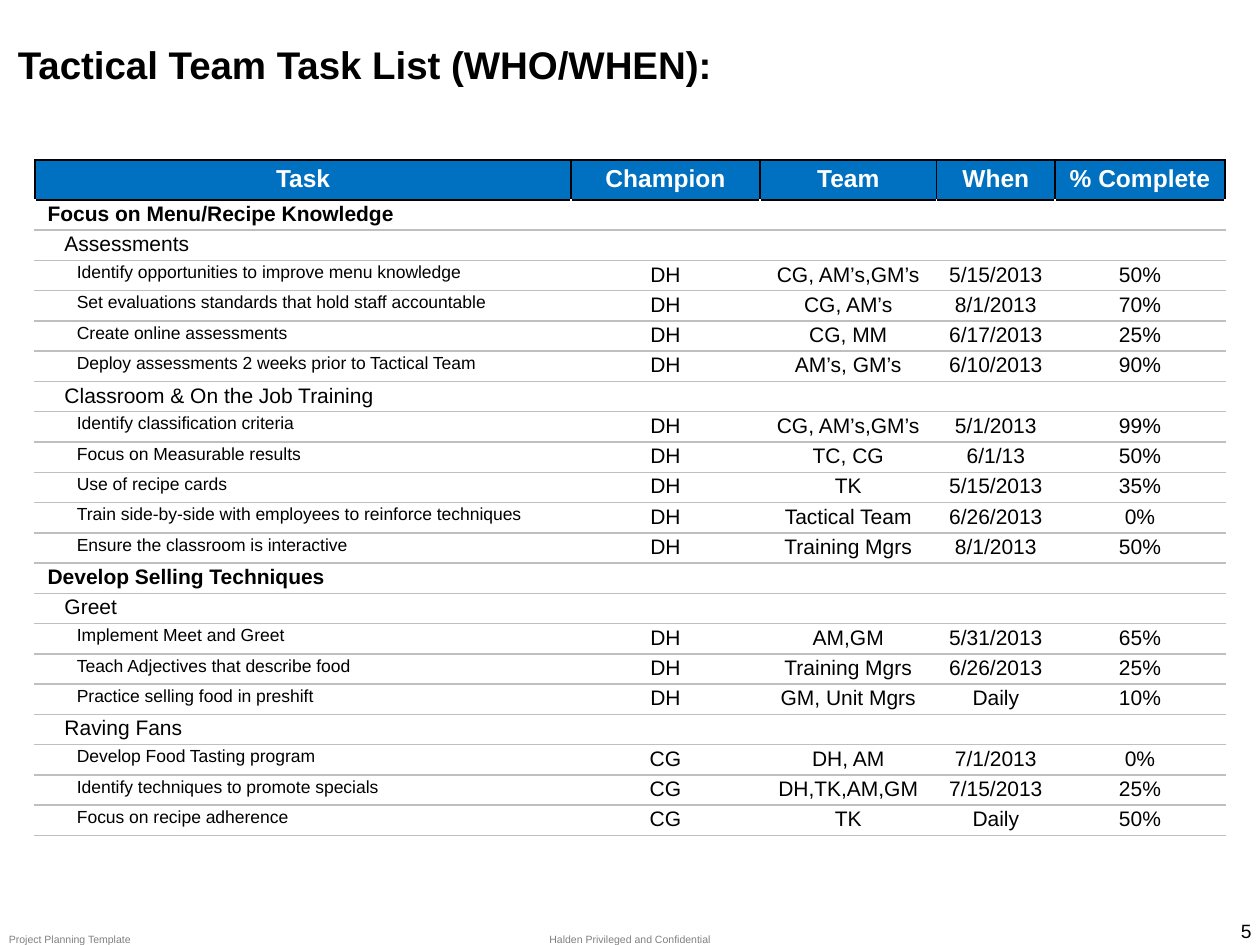
from dataclasses import dataclass

from lxml import etree
from pptx import Presentation
from pptx.dml.color import RGBColor
from pptx.enum.text import MSO_ANCHOR, PP_ALIGN
from pptx.oxml.ns import qn
from pptx.util import Cm, Pt

LEFT, CENTER, RIGHT = PP_ALIGN.LEFT, PP_ALIGN.CENTER, PP_ALIGN.RIGHT
TOP, MIDDLE = MSO_ANCHOR.TOP, MSO_ANCHOR.MIDDLE


@dataclass(frozen=True)
class Theme:
    font: str = "Arial"
    ink: str = "000000"
    muted: str = "808080"
    header_ink: str = "FFFFFF"
    header_fill: str = "0070C0"
    rule: str = "BFBFBF"
    title_size: int = 22
    header_size: int = 14
    body_size: int = 12
    task_size: int = 10
    number_size: int = 11
    footer_size: int = 6


HEADINGS = ["Task", "Champion", "Team", "When", "% Complete"]
COLUMN_WIDTHS = [10.8, 3.81, 3.56, 2.39, 3.42]
HEADER_HEIGHT, ROW_HEIGHT = 0.8, 0.61
LEVEL_INDENTS = [0, 0.34, 0.59]
SECTION, GROUP, TASK = range(3)

TASKS = [
    (SECTION, "Focus on Menu/Recipe Knowledge"),
    (GROUP, "Assessments"),
    (TASK, "Identify opportunities to improve menu knowledge", "DH", "CG, AM’s,GM’s", "5/15/2013", "50%"),
    (TASK, "Set evaluations standards that hold staff accountable", "DH", "CG, AM’s", "8/1/2013", "70%"),
    (TASK, "Create online assessments", "DH", "CG, MM", "6/17/2013", "25%"),
    (TASK, "Deploy assessments 2 weeks prior to Tactical Team", "DH", "AM’s, GM’s", "6/10/2013", "90%"),
    (GROUP, "Classroom & On the Job Training"),
    (TASK, "Identify classification criteria", "DH", "CG, AM’s,GM’s", "5/1/2013", "99%"),
    (TASK, "Focus on Measurable results", "DH", "TC, CG", "6/1/13", "50%"),
    (TASK, "Use of recipe cards", "DH", "TK", "5/15/2013", "35%"),
    (TASK, "Train side-by-side with employees to reinforce techniques", "DH", "Tactical Team", "6/26/2013", "0%"),
    (TASK, "Ensure the classroom is interactive", "DH", "Training Mgrs", "8/1/2013", "50%"),
    (SECTION, "Develop Selling Techniques"),
    (GROUP, "Greet"),
    (TASK, "Implement Meet and Greet", "DH", "AM,GM", "5/31/2013", "65%"),
    (TASK, "Teach Adjectives that describe food", "DH", "Training Mgrs", "6/26/2013", "25%"),
    (TASK, "Practice selling food in preshift", "DH", "GM, Unit Mgrs", "Daily", "10%"),
    (GROUP, "Raving Fans"),
    (TASK, "Develop Food Tasting program", "CG", "DH, AM", "7/1/2013", "0%"),
    (TASK, "Identify techniques to promote specials", "CG", "DH,TK,AM,GM", "7/15/2013", "25%"),
    (TASK, "Focus on recipe adherence", "CG", "TK", "Daily", "50%"),
]


class SlideBuilder:
    def __init__(self, slide, theme):
        self.slide = slide
        self.theme = theme

    def paragraph(self, frame, text, size, color, bold=False, align=LEFT):
        paragraph = frame.paragraphs[0]
        paragraph.text = text
        paragraph.alignment = align
        font = paragraph.font
        font.name, font.size, font.bold = self.theme.font, Pt(size), bold
        font.color.rgb = RGBColor.from_string(color)
        return paragraph

    def text(self, box, text, size, color, bold=False, align=LEFT, anchor=TOP, insets=(0, 0)):
        frame = self.slide.shapes.add_textbox(*map(Cm, box)).text_frame
        frame.word_wrap = True
        frame.vertical_anchor = anchor
        frame.margin_left = frame.margin_right = Cm(insets[0])
        frame.margin_top = frame.margin_bottom = Cm(insets[1])
        self.paragraph(frame, text, size, color, bold, align)

    def borders(self, cell, colors):
        properties = cell._tc.get_or_add_tcPr()
        for side, color in colors.items():
            line = etree.SubElement(properties, qn(f"a:ln{side}"), w=str(Pt(1)))
            fill = etree.SubElement(line, qn("a:solidFill"))
            etree.SubElement(fill, qn("a:srgbClr"), val=color)

    def cell(self, cell, text, size, color, bold, align, inset, edges, fill=None, indent=0):
        cell.margin_left = cell.margin_right = Cm(0.25)
        cell.margin_top = cell.margin_bottom = Cm(inset)
        self.borders(cell, edges)
        if fill:
            cell.fill.solid()
            cell.fill.fore_color.rgb = RGBColor.from_string(fill)
        else:
            cell.fill.background()
        paragraph = self.paragraph(cell.text_frame, text, size, color, bold, align)
        if indent:
            paragraph._p.get_or_add_pPr().set("marL", str(Cm(indent)))
        if not text:
            etree.SubElement(paragraph._p, qn("a:endParaRPr"), sz=str(size * 100))

    def task_table(self, left, top):
        theme = self.theme
        height = HEADER_HEIGHT + ROW_HEIGHT * len(TASKS)
        table = self.slide.shapes.add_table(
            len(TASKS) + 1, len(HEADINGS),
            Cm(left), Cm(top), Cm(sum(COLUMN_WIDTHS)), Cm(height)).table
        table.horz_banding = False
        for column, width in zip(table.columns, COLUMN_WIDTHS):
            column.width = Cm(width)
        for index, row in enumerate(table.rows):
            row.height = Cm(ROW_HEIGHT if index else HEADER_HEIGHT)

        for column, heading in enumerate(HEADINGS):
            self.cell(table.cell(0, column), heading, theme.header_size, theme.header_ink,
                      True, CENTER, 0.1, dict.fromkeys("LRTB", theme.ink), theme.header_fill)

        for row, (level, name, *details) in enumerate(TASKS, 1):
            edges = {"T": theme.ink if row == 1 else theme.rule, "B": theme.rule}
            self.cell(table.cell(row, 0), name,
                      theme.task_size if level == TASK else theme.body_size, theme.ink,
                      level == SECTION, LEFT, 0.05, edges, indent=LEVEL_INDENTS[level])
            for column in range(1, len(HEADINGS)):
                detail = details[column - 1] if details else ""
                self.cell(table.cell(row, column), detail, theme.body_size, theme.ink,
                          False, CENTER, 0.05, edges)


def main():
    theme = Theme()
    deck = Presentation()
    deck.slide_width, deck.slide_height = Cm(25.4), Cm(19.05)
    builder = SlideBuilder(deck.slides.add_slide(deck.slide_layouts[6]), theme)

    builder.text((10.74, 18.8, 3.92, 0.25), "Halden Privileged and Confidential",
                 theme.footer_size, theme.muted, align=CENTER)
    builder.text((0.18, 18.8, 7.62, 0.25), "Project Planning Template",
                 theme.footer_size, theme.muted)
    builder.text((22.68, 18.52, 2.8, 0.51), "5", theme.number_size, theme.ink,
                 align=RIGHT, anchor=MIDDLE, insets=(0.25, 0))
    builder.task_table(0.71, 3.23)
    builder.text((0.36, 0.71, 24.82, 1.17), "Tactical Team Task List (WHO/WHEN):",
                 theme.title_size, theme.ink, bold=True, anchor=MIDDLE, insets=(0, 0.13))
    deck.save("out.pptx")


if __name__ == "__main__":
    main()
